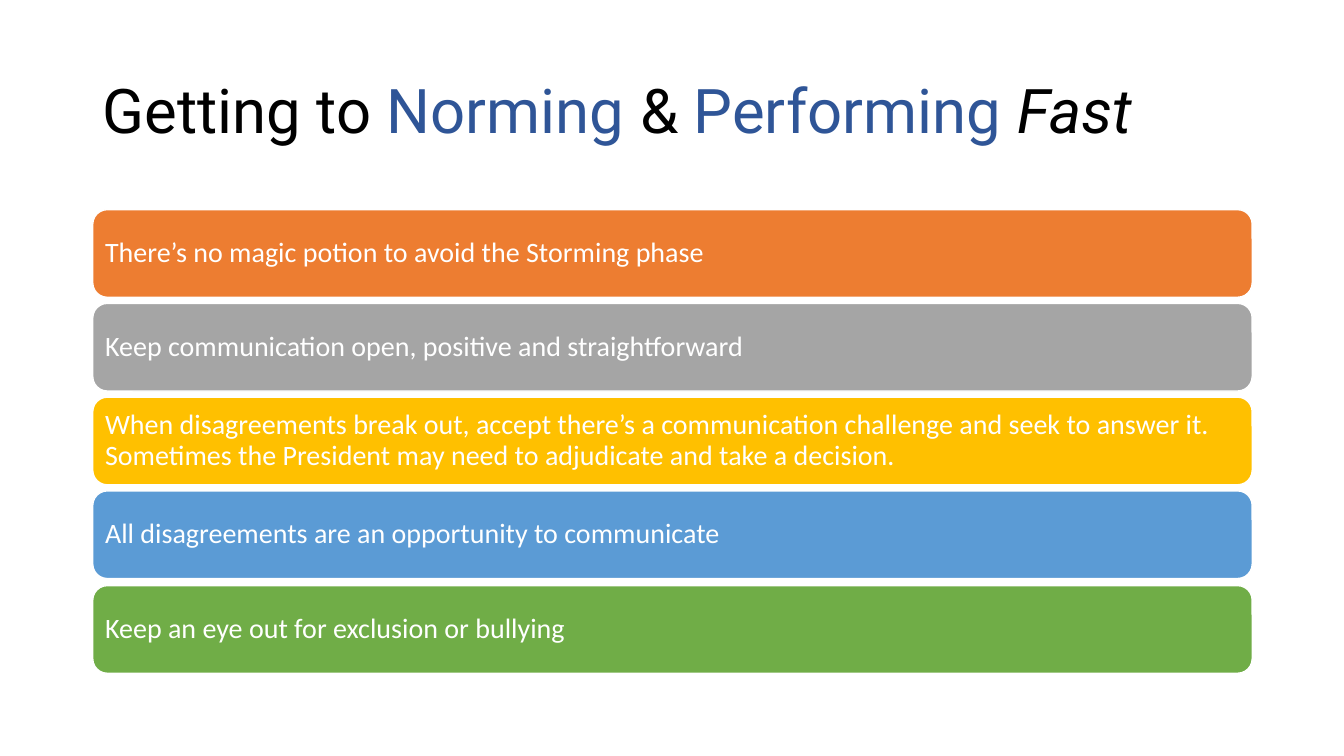
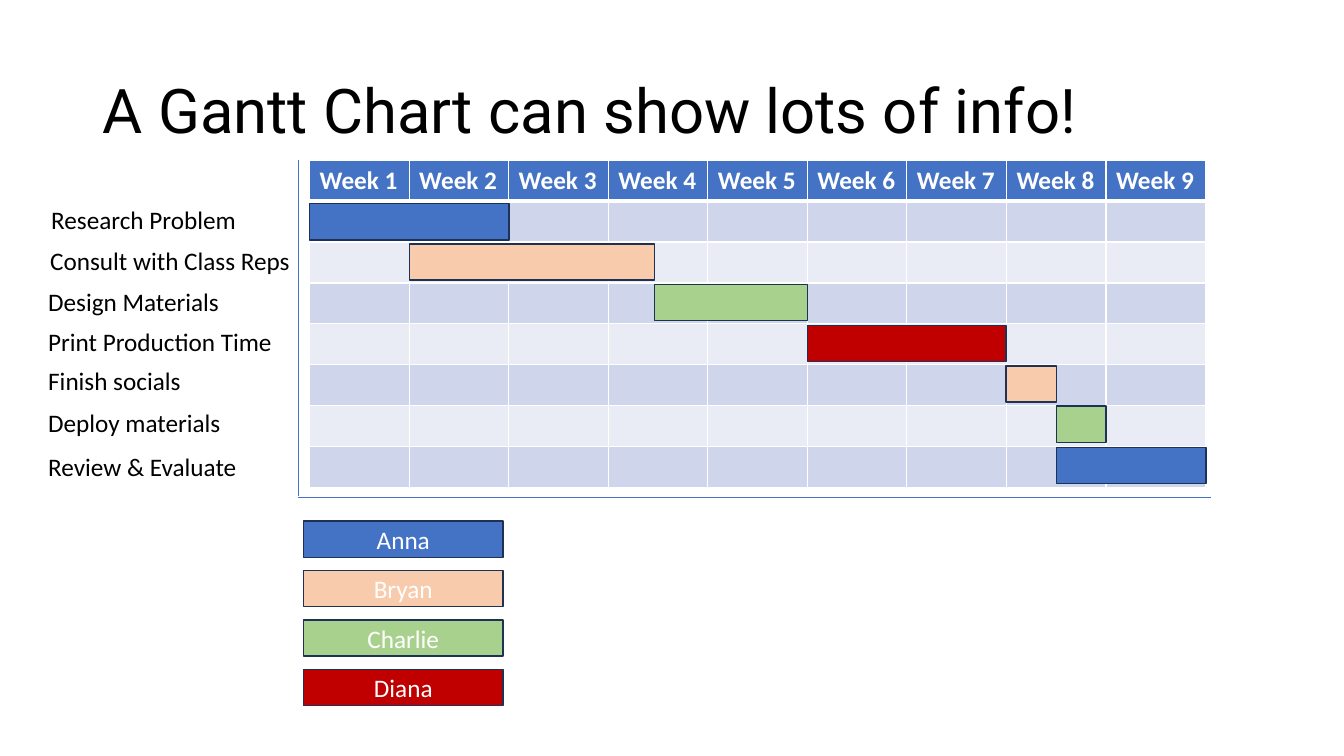
from lxml import etree
from pptx import Presentation
from pptx import util as u
from pptx.dml.color import RGBColor
from pptx.enum import shapes, text
from pptx.oxml import ns

PX = 9144  # one hundredth of an inch
COLORS = {
    "white": "FFFFFF", "black": "000000", "navy": "1E3256", "accent": "2F5597",
    "blue": "4472C4", "peach": "F8CBAD", "light green": "A9D18E", "red": "C00000",
    "orange": "ED7D31", "grey": "A5A5A5", "gold": "FFC000", "sky": "5B9BD5",
    "green": "70AD47", "odd row": "CFD5EA", "even row": "E9EBF5",
}
RGB = {name: RGBColor.from_string(value) for name, value in COLORS.items()}


def write(frame, words, size, color, align=text.PP_ALIGN.LEFT, font="Calibri"):
    para = frame.paragraphs[0]
    para.alignment = align
    para.font.name, para.font.size = font, u.Pt(size)
    para.font.color.rgb = RGB[color]
    para.add_run().text = words
    return para


def add_box(page, kind, left, top, width, height, fill, line):
    box = page.shapes.add_shape(kind, left * PX, top * PX, width * PX, height * PX)
    box.shadow.inherit = False
    box.fill.solid()
    box.fill.fore_color.rgb = RGB[fill]
    box.line.color.rgb = RGB[line]
    box.line.width = u.Pt(1)
    box.text_frame.vertical_anchor = text.MSO_ANCHOR.MIDDLE
    return box


deck = Presentation()
deck.slide_width, deck.slide_height = 1333 * PX, 750 * PX

# Pages and their titles
TITLES = [
    [("Getting to ", "black"), ("Norming", "accent"), (" & ", "black"),
     ("Performing ", "accent"), ("Fast", "black")],
    [("A Gantt Chart can show lots of info!", "black")],
]
pages = []
for spans in TITLES:
    page = deck.slides.add_slide(deck.slide_layouts[5])
    title = page.shapes.title
    title.left, title.top, title.width, title.height = 92 * PX, 40 * PX, 1150 * PX, 145 * PX
    frame = title.text_frame
    frame.vertical_anchor = text.MSO_ANCHOR.MIDDLE
    frame.auto_size = text.MSO_AUTO_SIZE.NONE
    para = frame.paragraphs[0]
    para.alignment, para.line_spacing = text.PP_ALIGN.LEFT, 0.9
    para.font.name, para.font.size = "Roboto", u.Pt(44)
    for words, color in spans:
        span = para.add_run()
        span.text = words
        span.font.color.rgb = RGB[color]
        if words == "Fast":
            span.font.italic = True
    pages.append(page)
advice_page, gantt_page = pages

# Advice bands
ADVICE = [
    ("There’s no magic potion to avoid the Storming phase", "orange"),
    ("Keep communication open, positive and straightforward", "grey"),
    ("When disagreements break out, accept there’s a communication challenge and seek to "
     "answer it. Sometimes the President may need to adjudicate and take a decision.", "gold"),
    ("All disagreements are an opportunity to communicate", "sky"),
    ("Keep an eye out for exclusion or bullying", "green"),
]
for index, (words, color) in enumerate(ADVICE):
    band = add_box(advice_page, shapes.MSO_SHAPE.ROUNDED_RECTANGLE,
                   92, 208 + index * 373 // 4, 1150, 87, color, "white")
    frame = band.text_frame
    frame.margin_left = frame.margin_right = frame.margin_top = frame.margin_bottom = 8 * PX
    write(frame, words, 20, "white").line_spacing = 0.9

# Chart axes
for left, top, right, bottom in [(296, 159, 296, 492), (296, 493, 1201, 493)]:
    axis = gantt_page.shapes.add_connector(
        shapes.MSO_CONNECTOR.STRAIGHT, left * PX, top * PX, right * PX, bottom * PX)
    axis.line.color.rgb = RGB["blue"]
    axis.line.width = u.Pt(0.5)
    etree.SubElement(axis.element.spPr, ns.qn("a:effectLst"))

# Week grid
WEEKS, ROWS, GRID_LEFT, GRID_WIDTH = 9, 8, 307, 889
grid = gantt_page.shapes.add_table(
    ROWS, WEEKS, GRID_LEFT * PX, 159 * PX, GRID_WIDTH * PX, 324 * PX).table
for row in range(ROWS):
    for week in range(WEEKS):
        cell = grid.cell(row, week)
        properties = cell._tc.get_or_add_tcPr()
        for side in ("L", "R", "T", "B"):
            under_header = (row, side) in [(0, "B"), (1, "T")]
            border = etree.SubElement(properties, ns.qn("a:ln" + side),
                                      w=str(u.Pt(3 if under_header else 1)))
            paint = etree.SubElement(border, ns.qn("a:solidFill"))
            etree.SubElement(paint, ns.qn("a:srgbClr"), val=COLORS["white"])
        cell.fill.solid()
        if row == 0:
            cell.fill.fore_color.rgb = RGB["blue"]
            write(cell.text_frame, f"Week {week + 1}", 18, "white").font.bold = True
        else:
            cell.fill.fore_color.rgb = RGB["odd row" if row % 2 else "even row"]

# Tasks: label, label left and top, owner, start and end in weeks
OWNERS = {"Anna": "blue", "Bryan": "peach", "Charlie": "light green", "Diana": "red"}
TASKS = [
    ("Research Problem", 41, 198, "Anna", 0, 2),
    ("Consult with Class Reps", 40, 238, "Bryan", 1, 3.46),
    ("Design Materials", 38, 279, "Charlie", 3.46, 5),
    ("Print Production Time", 38, 319, "Diana", 5, 7),
    ("Finish socials", 38, 358, "Bryan", 7, 7.5),
    ("Deploy materials", 38, 399, "Charlie", 7.5, 8),
    ("Review & Evaluate", 38, 443, "Anna", 7.5, 9),
]
for index, (words, left, top, owner, start, end) in enumerate(TASKS):
    bar_left, bar_right = (GRID_LEFT + round(week * GRID_WIDTH / WEEKS) for week in (start, end))
    add_box(gantt_page, shapes.MSO_SHAPE.RECTANGLE, bar_left, 202 + index * 242 // 6,
            bar_right - bar_left, 36, OWNERS[owner], "navy")
    label = gantt_page.shapes.add_textbox(left * PX, top * PX, 260 * PX, 40 * PX)
    label.text_frame.word_wrap = True
    write(label.text_frame, words, 18, "black")

# Owner legend
for index, (owner, color) in enumerate(OWNERS.items()):
    key = add_box(gantt_page, shapes.MSO_SHAPE.RECTANGLE,
                  301, 517 + index * 49, 198, 36, color, "navy")
    write(key.text_frame, owner, 18, "white", text.PP_ALIGN.CENTER)

deck.save("out.pptx")
